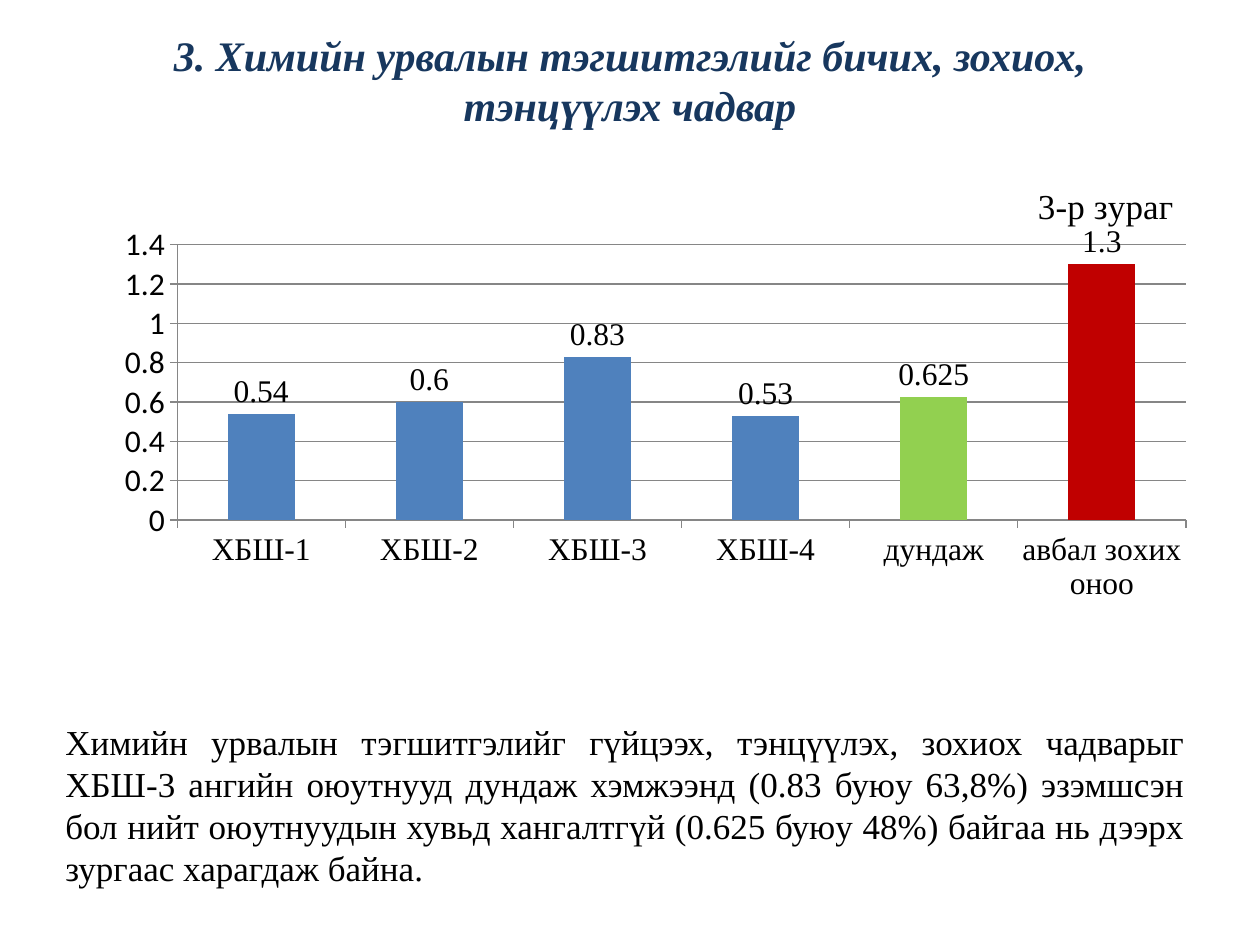
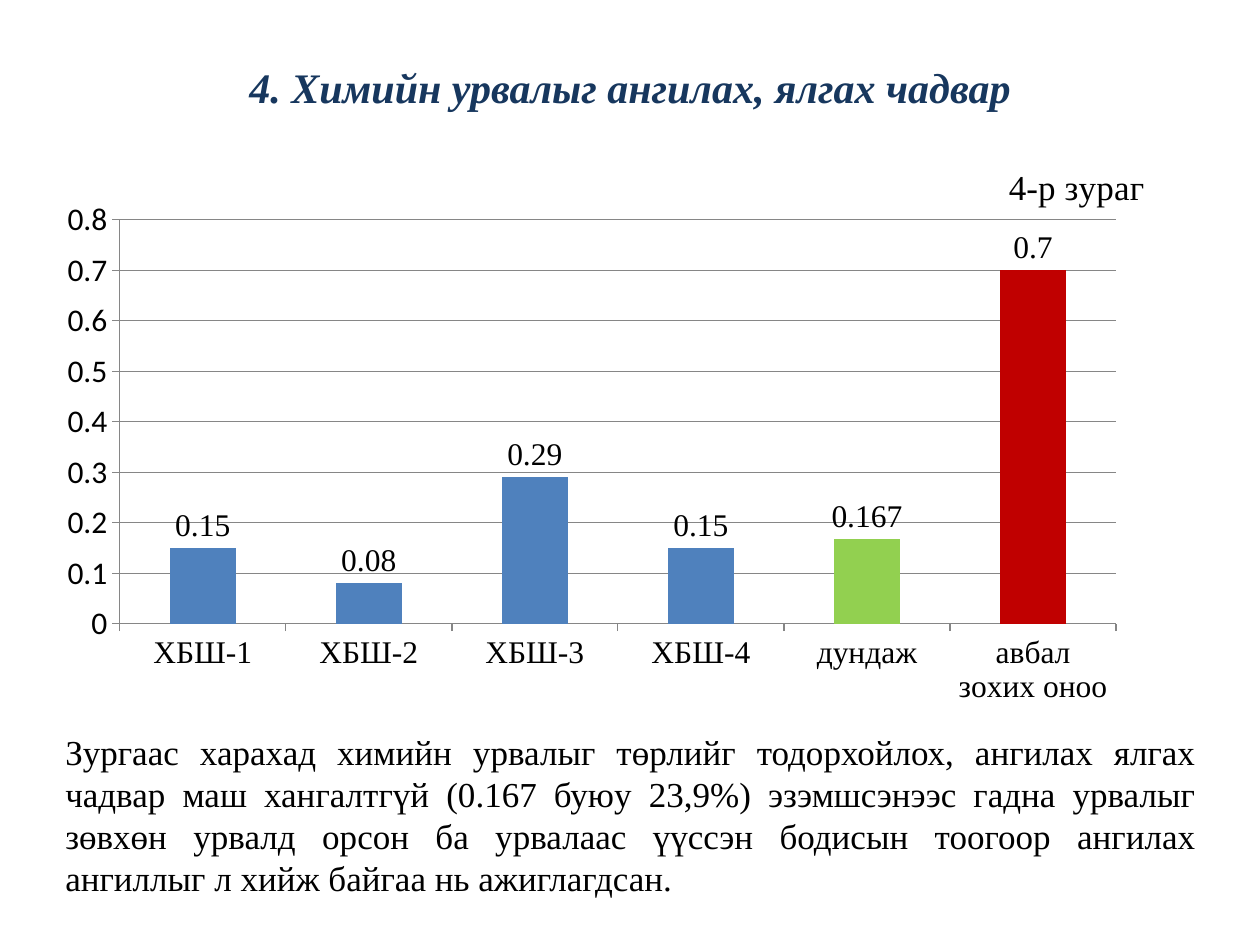
from dataclasses import dataclass

from lxml import etree
from pptx import Presentation
from pptx.chart.chart import Chart
from pptx.chart.data import CategoryChartData
from pptx.dml.color import RGBColor
from pptx.enum.chart import XL_CHART_TYPE as ChartType
from pptx.enum.chart import XL_LABEL_POSITION as LabelPosition
from pptx.enum.chart import XL_TICK_MARK as TickMark
from pptx.enum.text import MSO_ANCHOR as Anchor
from pptx.enum.text import MSO_AUTO_SIZE as AutoSize
from pptx.enum.text import PP_ALIGN as Align
from pptx.oxml.ns import qn
from pptx.slide import Slide
from pptx.util import Inches, Pt

# Shared look
COLORS = {
    "title": "17375E",
    "text": "000000",
    "group": "4F81BD",
    "average": "92D050",
    "required": "C00000",
    "line": "868686",
}
SERIF = "Times New Roman"
TITLE_FONT = {"name": SERIF, "size": Pt(24), "bold": True, "italic": True}
BODY_FONT = {"name": SERIF, "size": Pt(20), "bold": False}
LABEL_FONT = {"name": SERIF, "size": Pt(18), "bold": False}
SCALE_FONT = {"name": "Calibri", "size": Pt(18), "bold": False}
CHART_FONT = {"name": "Calibri", "size": Pt(10)}

CATEGORIES = ("ХБШ-1", "ХБШ-2", "ХБШ-3", "ХБШ-4", "дундаж", "авбал зохих оноо")
POINT_COLORS = {4: "average", 5: "required"}


@dataclass(frozen=True)
class Box:
    left: float
    top: float
    width: float
    height: float

    def lengths(self) -> tuple:
        return tuple(
            Inches(value) for value in (self.left, self.top, self.width, self.height)
        )


@dataclass(frozen=True)
class SkillSlide:
    title: str
    title_box: Box
    title_bottom_inset: float
    caption: str
    caption_place: tuple[float, float]
    chart_box: Box
    plot_place: tuple[float, float, float, float]
    scores: tuple[float, ...]
    scale_max: float
    scale_step: float
    comment: str
    comment_box: Box


SKILL_SLIDES = (
    SkillSlide(
        title="3. Химийн урвалын тэгшитгэлийг бичих, зохиох, тэнцүүлэх чадвар",
        title_box=Box(0.5, 0.3, 9, 1.03),
        title_bottom_inset=0.41,
        caption="3-р зураг",
        caption_place=(0.85, 0.02),
        chart_box=Box(0.75, 1.33, 8.75, 4.08),
        plot_place=(0.075, 0.15, 0.915, 0.536),
        scores=(0.54, 0.6, 0.83, 0.53, 0.625, 1.3),
        scale_max=1.4,
        scale_step=0.2,
        comment=(
            "Химийн урвалын тэгшитгэлийг гүйцээх, тэнцүүлэх, зохиох чадварыг "
            "ХБШ-3 ангийн оюутнууд дундаж хэмжээнд (0.83 буюу 63,8%) эзэмшсэн "
            "бол нийт оюутнуудын хувьд хангалтгүй (0.625 буюу 48%) байгаа нь "
            "дээрх зургаас харагдаж байна."
        ),
        comment_box=Box(0.42, 5.67, 9.08, 1.45),
    ),
    SkillSlide(
        title="4. Химийн урвалыг ангилах, ялгах чадвар",
        title_box=Box(0.5, 0.3, 9, 0.78),
        title_bottom_inset=0.05,
        caption="4-р зураг",
        caption_place=(0.86, 0.02),
        chart_box=Box(0.5, 1.17, 8.67, 4.42),
        plot_place=(0.052, 0.13, 0.912, 0.727),
        scores=(0.15, 0.08, 0.29, 0.15, 0.167, 0.7),
        scale_max=0.8,
        scale_step=0.1,
        comment=(
            "Зургаас харахад химийн урвалыг төрлийг тодорхойлох, ангилах ялгах "
            "чадвар маш хангалтгүй (0.167 буюу 23,9%) эзэмшсэнээс гадна урвалыг "
            "зөвхөн урвалд орсон ба урвалаас үүссэн бодисын тоогоор ангилах "
            "ангиллыг л хийж байгаа нь ажиглагдсан."
        ),
        comment_box=Box(0.42, 5.75, 9.17, 1.45),
    ),
)


def color(name: str) -> RGBColor:
    return RGBColor.from_string(COLORS[name])


def set_font(font, values: dict, color_name: str = "text") -> None:
    for attribute, value in values.items():
        setattr(font, attribute, value)
    font.color.rgb = color(color_name)


def add_text(slide: Slide, box: Box, text: str, font_values: dict,
             color_name: str, align: Align, frame_values: dict) -> None:
    frame = slide.shapes.add_textbox(*box.lengths()).text_frame
    for attribute, value in {"word_wrap": True, **frame_values}.items():
        setattr(frame, attribute, value)
    paragraph = frame.paragraphs[0]
    paragraph.alignment = align
    run = paragraph.add_run()
    run.text = text
    set_font(run.font, font_values, color_name)


def set_layout(parent, index: int, values: dict) -> None:
    """Place a chart part by fractions of the chart area."""
    for old_layout in parent.findall(qn("c:layout")):
        parent.remove(old_layout)
    layout = etree.Element(qn("c:layout"))
    manual = etree.SubElement(layout, qn("c:manualLayout"))
    for tag, value in values.items():
        etree.SubElement(manual, qn(f"c:{tag}")).set("val", str(value))
    parent.insert(index, layout)


def style_axes(chart: Chart, skill: SkillSlide) -> None:
    value_axis, category_axis = chart.value_axis, chart.category_axis
    scale = {
        "minimum_scale": 0,
        "maximum_scale": skill.scale_max,
        "major_unit": skill.scale_step,
        "has_major_gridlines": True,
    }
    for attribute, value in scale.items():
        setattr(value_axis, attribute, value)
    for axis, font_values in ((value_axis, SCALE_FONT), (category_axis, LABEL_FONT)):
        axis.major_tick_mark = TickMark.OUTSIDE
        axis.minor_tick_mark = TickMark.NONE
        set_font(axis.tick_labels.font, font_values)
    for line_format in (value_axis.format, category_axis.format,
                        value_axis.major_gridlines.format):
        line_format.line.color.rgb = color("line")
        line_format.line.width = Pt(0.75)


def style_columns(chart: Chart) -> None:
    plot = chart.plots[0]
    plot.gap_width = 150
    plot.vary_by_categories = False
    series = plot.series[0]
    fills = [series.format.fill]
    names = ["group"]
    for index, name in POINT_COLORS.items():
        fills.append(series.points[index].format.fill)
        names.append(name)
    for fill, name in zip(fills, names):
        fill.solid()
        fill.fore_color.rgb = color(name)
    labels = series.data_labels
    labels.show_value = True
    labels.position = LabelPosition.OUTSIDE_END
    set_font(labels.font, LABEL_FONT)


def add_score_chart(slide: Slide, skill: SkillSlide) -> None:
    data = CategoryChartData()
    data.categories = CATEGORIES
    data.add_series("Series 1", skill.scores)
    chart = slide.shapes.add_chart(
        ChartType.COLUMN_CLUSTERED, *skill.chart_box.lengths(), data
    ).chart
    chart.has_legend = False
    set_font(chart.font, CHART_FONT)

    # Caption at the upper right of the chart
    chart.has_title = True
    caption = chart.chart_title
    run = caption.text_frame.paragraphs[0].add_run()
    run.text = skill.caption
    set_font(run.font, BODY_FONT)
    x, y = skill.caption_place
    set_layout(caption.element, 1, {"xMode": "edge", "yMode": "edge", "x": x, "y": y})

    style_axes(chart, skill)
    style_columns(chart)

    # Plot area
    place = dict(zip("xywh", skill.plot_place))
    plot_area = chart.element.find(f".//{qn('c:plotArea')}")
    set_layout(plot_area, 0,
               {"layoutTarget": "inner", "xMode": "edge", "yMode": "edge", **place})


def add_skill_slide(presentation: Presentation, skill: SkillSlide) -> None:
    slide = presentation.slides.add_slide(presentation.slide_layouts[6])
    add_text(slide, skill.title_box, skill.title, TITLE_FONT, "title", Align.CENTER,
             {"vertical_anchor": Anchor.MIDDLE,
              "margin_bottom": Inches(skill.title_bottom_inset)})
    add_score_chart(slide, skill)
    add_text(slide, skill.comment_box, skill.comment, BODY_FONT, "text", Align.JUSTIFY,
             {"auto_size": AutoSize.SHAPE_TO_FIT_TEXT})


def main() -> None:
    presentation = Presentation()
    presentation.slide_width = Inches(10)
    presentation.slide_height = Inches(7.5)
    for skill in SKILL_SLIDES:
        add_skill_slide(presentation, skill)
    presentation.save("out.pptx")


if __name__ == "__main__":
    main()
